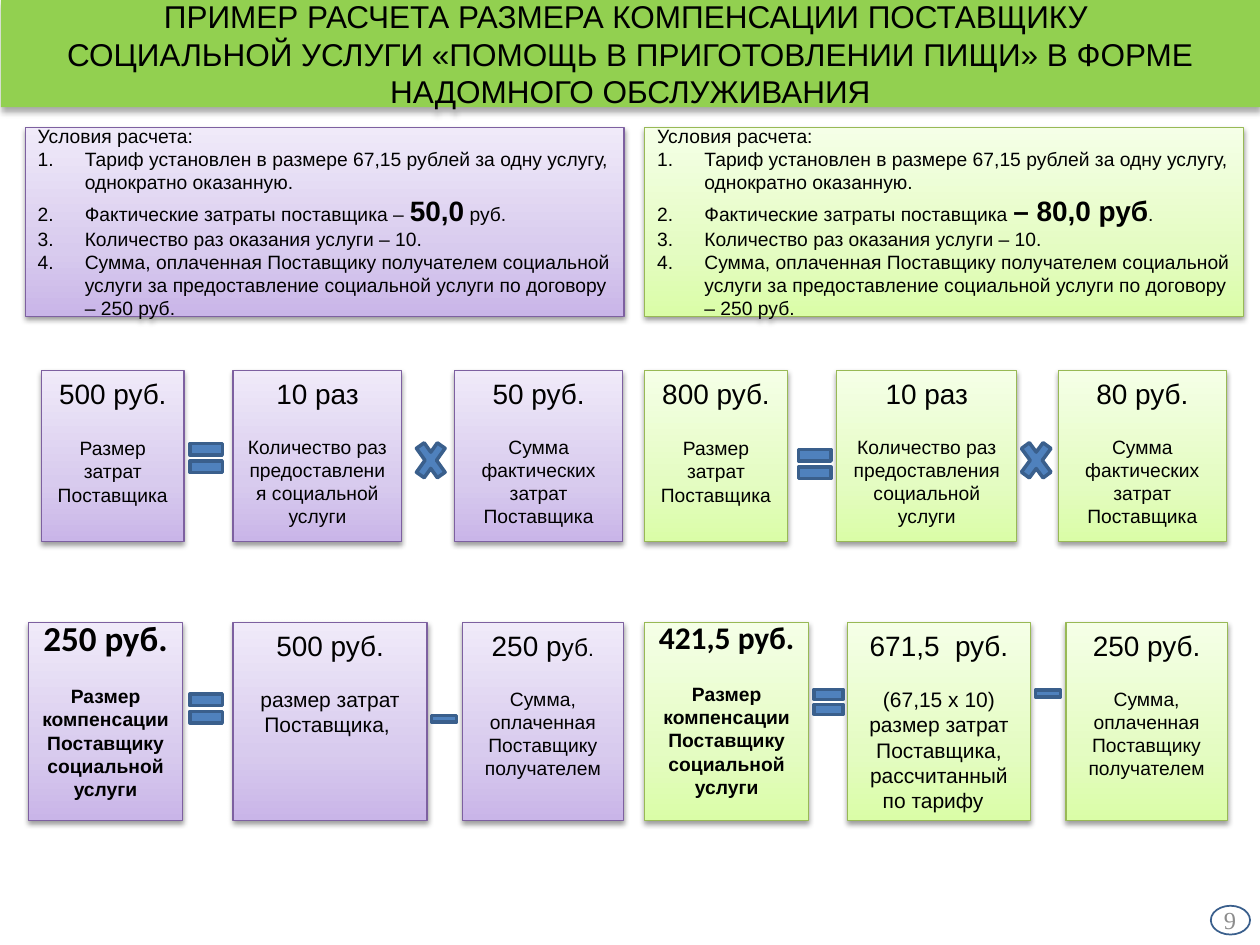
import copy

import pptx
import pptx.dml.color
import pptx.enum.shapes
import pptx.enum.text
import pptx.oxml
import pptx.oxml.ns
import pptx.util

Cm, Pt = pptx.util.Cm, pptx.util.Pt
RGB = pptx.dml.color.RGBColor
SHAPE = pptx.enum.shapes.MSO_SHAPE
ALIGN = pptx.enum.text.PP_ALIGN
ANCHOR = pptx.enum.text.MSO_ANCHOR
qn = pptx.oxml.ns.qn
NS = pptx.oxml.ns.nsdecls("a")

BLACK = RGB(0x00, 0x00, 0x00)
GREY = RGB(0x8C, 0x8C, 0x8C)
TITLE_GREEN = RGB(0x92, 0xD0, 0x50)
SIGN_BLUE = RGB(0x4F, 0x81, 0xBD)
SIGN_EDGE = RGB(0x3A, 0x5F, 0x8C)
# Card themes: edge, then gradient from bottom to top
PURPLE = (RGB(0x7D, 0x60, 0xA0),
          (RGB(0xC9, 0xB5, 0xE8), RGB(0xD8, 0xCB, 0xEE), RGB(0xF0, 0xEA, 0xF9)))
GREEN = (RGB(0x98, 0xB9, 0x55),
         (RGB(0xDA, 0xFD, 0xA7), RGB(0xE4, 0xFC, 0xC2), RGB(0xF5, 0xFF, 0xE7)))
STOPS = (0, 0.35, 1)

ROW1, ROW1_H = 7.47, 3.45
ROW2, ROW2_H = 12.55, 3.99


class Deck:
    """Style and current slide."""

    font = "Arial"

    def __init__(self):
        self.prs = pptx.Presentation()
        self.prs.slide_width, self.prs.slide_height = Cm(25.4), Cm(19.05)
        self.s = self.prs.slides.add_slide(self.prs.slide_layouts[5])

    def run(self, p, text, size, bold=False, font=None, color=BLACK):
        r = p.add_run()
        r.text = text
        r.font.size, r.font.bold = Pt(size), bold
        r.font.name = font or self.font
        r.font.color.rgb = color

    def shadow(self, sp, alpha, blur, dist):
        sp.shadow.inherit = False
        sp._element.spPr.find(qn("a:effectLst")).append(pptx.oxml.parse_xml(
            f'<a:outerShdw {NS} blurRad="{Pt(blur)}" dist="{Pt(dist)}" dir="5400000" '
            f'rotWithShape="0"><a:srgbClr val="000000"><a:alpha val="{alpha}000"/>'
            '</a:srgbClr></a:outerShdw>'))

    def title(self, lines, x, y, w, h):
        sp = self.s.shapes.title
        sp.left, sp.top, sp.width, sp.height = Cm(x), Cm(y), Cm(w), Cm(h)
        sp.fill.solid()
        sp.fill.fore_color.rgb = TITLE_GREEN
        self.shadow(sp, 32, 3.5, 2.2)
        tf = sp.text_frame
        tf.auto_size = pptx.enum.text.MSO_AUTO_SIZE.NONE
        tf.vertical_anchor = ANCHOR.MIDDLE
        tf.margin_left = tf.margin_right = tf.margin_top = tf.margin_bottom = Cm(0.1)
        p = tf.paragraphs[0]
        p.alignment = ALIGN.CENTER
        for i, line in enumerate(lines):
            if i:
                p.add_line_break()
            self.run(p, line, 18)

    def panel(self, theme, x, y, w, h, anchor):
        edge, colors = theme
        sp = self.s.shapes.add_shape(SHAPE.RECTANGLE, Cm(x), Cm(y), Cm(w), Cm(h))
        sp.fill.gradient()
        sp.fill.gradient_angle = 90
        gs = sp._element.spPr.find(".//" + qn("a:gsLst"))
        gs.append(copy.deepcopy(gs[0]))
        for stop, pos, color in zip(sp.fill.gradient_stops, STOPS, colors):
            stop.position, stop.color.rgb = pos, color
        sp.line.color.rgb, sp.line.width = edge, Pt(0.75)
        self.shadow(sp, 38, 3.1, 1.6)
        sp.text_frame.word_wrap = True
        sp.text_frame.vertical_anchor = anchor
        return sp.text_frame

    def card(self, theme, x, y, w, h, head, body, gap=14, size=11):
        """Amount on top, explanation below."""
        tf = self.panel(theme, x, y, w, h, ANCHOR.TOP)
        p = tf.paragraphs[0]
        p.alignment, p.space_after = ALIGN.CENTER, Pt(gap)
        for text, pt in head:
            self.run(p, text, pt)
        for text in body:
            p = tf.add_paragraph()
            p.alignment = ALIGN.CENTER
            self.run(p, text, size)

    def result(self, theme, x, y, w, h, amount, size, text):
        """Bold card with the final compensation."""
        tf = self.panel(theme, x, y, w, h, ANCHOR.MIDDLE)
        tf.margin_bottom = Cm(0.66)
        p = tf.paragraphs[0]
        p.alignment, p.space_after = ALIGN.CENTER, Pt(15)
        self.run(p, amount, size, True, "Calibri")
        p = tf.add_paragraph()
        p.alignment = ALIGN.CENTER
        self.run(p, text, 11, True)

    def conditions(self, theme, x, y, w, h, heading, items):
        """Heading and numbered list; each item is a list of (text, bold)."""
        tf = self.panel(theme, x, y, w, h, ANCHOR.MIDDLE)
        p = tf.paragraphs[0]
        p.alignment = ALIGN.LEFT
        self.run(p, heading, 11)
        for item in items:
            p = tf.add_paragraph()
            p.alignment = ALIGN.LEFT
            pPr = p._p.get_or_add_pPr()
            pPr.set("marL", str(Cm(0.95)))
            pPr.set("indent", str(-Cm(0.95)))
            pPr.append(pptx.oxml.parse_xml(f'<a:buAutoNum {NS} type="arabicPeriod"/>'))
            for text, bold in item:
                self.run(p, text, 16 if bold else 11, bold)

    def sign(self, kind, x, y, w, h):
        sp = self.s.shapes.add_shape(kind, Cm(x), Cm(y), Cm(w), Cm(h))
        sp.shadow.inherit = False
        sp.fill.solid()
        sp.fill.fore_color.rgb = SIGN_BLUE
        sp.line.color.rgb, sp.line.width = SIGN_EDGE, Pt(2)

    def page_number(self, text):
        sp = self.s.shapes.add_textbox(Cm(23.62), Cm(18.03), Cm(1.55), Cm(1.02))
        tf = sp.text_frame
        tf.word_wrap, tf.vertical_anchor = True, ANCHOR.MIDDLE
        tf.margin_top = tf.margin_bottom = Cm(0.1)
        p = tf.paragraphs[0]
        p.alignment = ALIGN.RIGHT
        self.run(p, text, 14, font="Times New Roman", color=GREY)
        sp = self.s.shapes.add_shape(SHAPE.OVAL, Cm(24.41), Cm(18.26), Cm(0.79), Cm(0.58))
        sp.shadow.inherit = False
        sp.fill.background()
        sp.line.color.rgb, sp.line.width = SIGN_EDGE, Pt(1)


def main():
    d = Deck()
    d.title(["ПРИМЕР РАСЧЕТА РАЗМЕРА КОМПЕНСАЦИИ ПОСТАВЩИКУ ",
             "СОЦИАЛЬНОЙ УСЛУГИ «ПОМОЩЬ В ПРИГОТОВЛЕНИИ ПИЩИ» В ФОРМЕ "
             "НАДОМНОГО ОБСЛУЖИВАНИЯ"], 0.02, 0, 25.38, 2.16)

    # Calculation conditions
    for theme, x, costs in (
            (PURPLE, 0.51, [("Фактические затраты поставщика – ", False),
                            ("50,0", True), (" руб.", False)]),
            (GREEN, 13, [("Фактические затраты поставщика ", False),
                         ("– 80,0 руб", True), (".", False)])):
        d.conditions(theme, x, 2.57, 12.07, 3.81, "Условия расчета:", [
            [("Тариф установлен в размере 67,15 рублей за одну услугу, "
              "однократно оказанную.", False)],
            costs,
            [("Количество раз оказания услуги – 10.", False)],
            [("Сумма, оплаченная Поставщику получателем социальной услуги за "
              "предоставление социальной услуги по договору – 250 руб.", False)]])

    # Costs = number of times x actual costs: (x, width, amount) per card
    for theme, total, times, price in (
            (PURPLE, (0.84, 2.87, "500 руб."), (4.7, 3.4, "10 раз"), (9.17, 3.38, "50 руб.")),
            (GREEN, (13, 2.87, "800 руб."), (16.87, 3.63, "10 раз"), (21.34, 3.38, "80 руб."))):
        for (x, w, amount), text, gap in (
                (total, "Размер затрат Поставщика", 15),
                (times, "Количество раз предоставления социальной услуги", 14),
                (price, "Сумма фактических затрат Поставщика", 14)):
            d.card(theme, x, ROW1, w, ROW1_H, [(amount, 16)], [text], gap)

    # Compensation = costs - paid sum
    for theme, x, w, amount, size in ((PURPLE, 0.58, 3.1, "250 руб.", 20),
                                      (GREEN, 13, 3.3, "421,5 руб.", 18)):
        d.result(theme, x, ROW2, w, ROW2_H, amount, size,
                 "Размер компенсации Поставщику социальной услуги")
    d.card(PURPLE, 4.7, ROW2, 3.91, ROW2_H, [("500 руб.", 16)],
           ["размер затрат Поставщика, "], size=12)
    d.card(GREEN, 17.09, ROW2, 3.68, ROW2_H, [("671,5  руб.", 16)],
           ["(67,15 х 10)", "размер затрат Поставщика, рассчитанный по тарифу  "], size=12)
    for theme, x, head in ((PURPLE, 9.32, [("250 р", 16), ("уб", 14), (".", 12)]),
                           (GREEN, 21.49, [("250 руб.", 16)])):
        d.card(theme, x, ROW2, 3.25, ROW2_H, head,
               ["Сумма, оплаченная Поставщику получателем"])

    # Operation signs
    for kind, x, y, w, h in (
            (SHAPE.MATH_EQUAL, 3.71, 8.74, 0.89, 0.99),
            (SHAPE.MATH_MULTIPLY, 8.28, 8.71, 0.81, 1.14),
            (SHAPE.MATH_EQUAL, 3.71, 13.79, 0.89, 0.99),
            (SHAPE.MATH_MINUS, 8.61, 14.2, 0.69, 0.58),
            (SHAPE.MATH_EQUAL, 15.98, 8.86, 0.89, 0.99),
            (SHAPE.MATH_MULTIPLY, 20.47, 8.71, 0.84, 1.14),
            (SHAPE.MATH_EQUAL, 16.31, 13.72, 0.79, 0.86),
            (SHAPE.MATH_MINUS, 20.78, 13.69, 0.69, 0.58)):
        d.sign(kind, x, y, w, h)

    d.page_number("9")
    d.prs.save("out.pptx")


if __name__ == "__main__":
    main()
